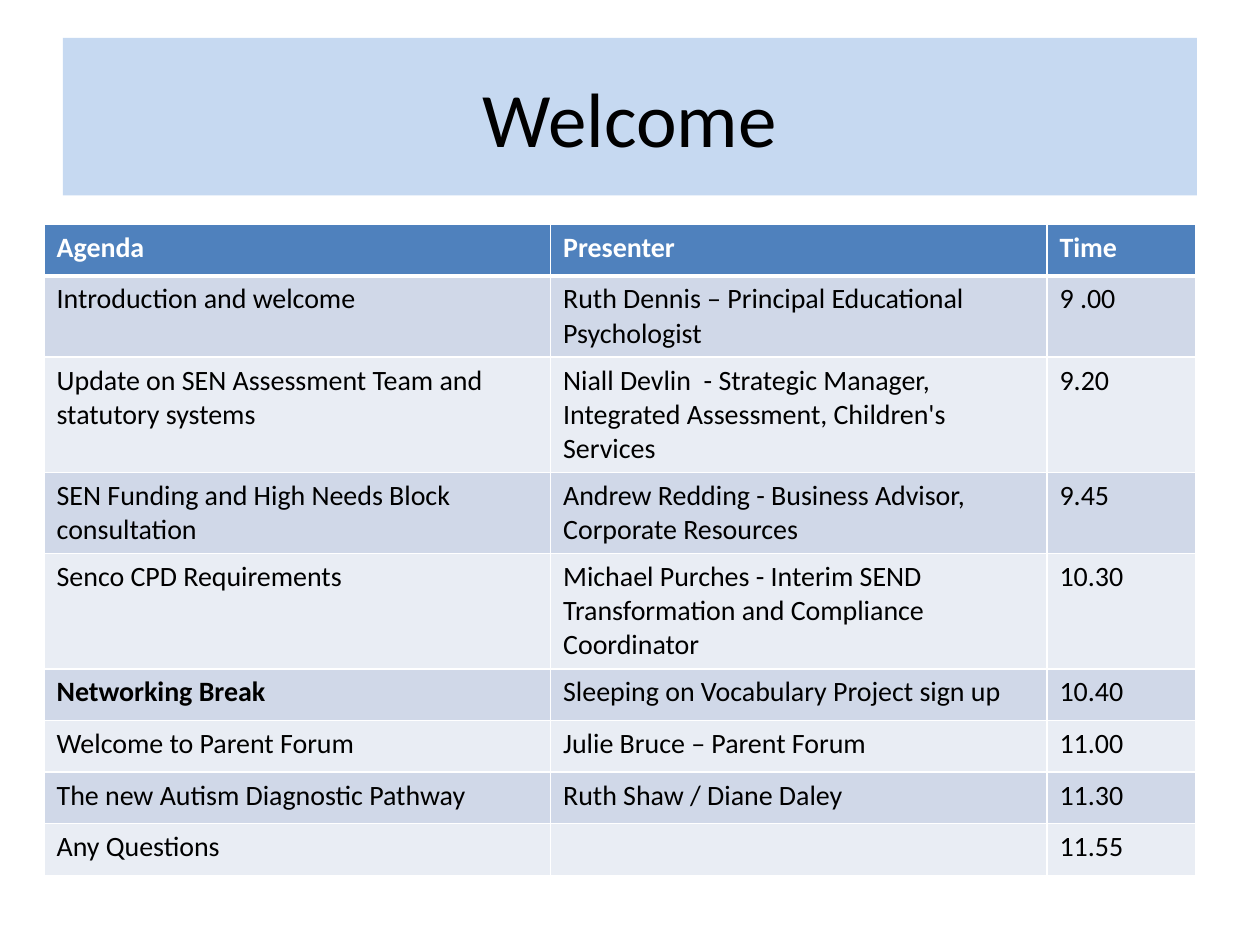
from lxml import etree
from pptx import Presentation, util as u
from pptx.dml.color import RGBColor
from pptx.enum import shapes, text
from pptx.oxml import ns

BANNER = RGBColor(0xC6, 0xD9, 0xF1)
HEADER = RGBColor(0x4F, 0x81, 0xBD)
BANDS = [RGBColor(0xD0, 0xD8, 0xE8), RGBColor(0xE9, 0xED, 0xF4)]
WHITE = RGBColor(0xFF, 0xFF, 0xFF)
BLACK = RGBColor(0x00, 0x00, 0x00)

AGENDA = [
    ("Agenda", "Presenter", "Time"),
    ("Introduction and welcome",
     "Ruth Dennis – Principal Educational Psychologist", "9 .00"),
    ("Update on SEN Assessment Team and statutory systems",
     "Niall Devlin  - Strategic Manager, Integrated Assessment, Children's Services", "9.20"),
    ("SEN Funding and High Needs Block consultation",
     "Andrew Redding - Business Advisor, Corporate Resources", "9.45"),
    ("Senco CPD Requirements",
     "Michael Purches - Interim SEND Transformation and Compliance Coordinator", "10.30"),
    ("Networking Break", "Sleeping on Vocabulary Project sign up", "10.40"),
    ("Welcome to Parent Forum", "Julie Bruce – Parent Forum", "11.00"),
    ("The new Autism Diagnostic Pathway", "Ruth Shaw / Diane Daley", "11.30"),
    ("Any Questions", "", "11.55"),
]
COLUMNS = [4.02, 3.94, 1.18]
ROW = 0.41


def write(frame, words, size=16, color=BLACK, bold=False, align=text.PP_ALIGN.LEFT):
    para = frame.paragraphs[0]
    para.alignment = align
    para.font.size = u.Pt(size)
    if words:
        span = para.add_run()
        span.text = words
        span.font.name = "Calibri"
        span.font.size = u.Pt(size)
        span.font.bold = bold
        span.font.color.rgb = color


def add_borders(cell, bottom, top):
    properties = cell._tc.get_or_add_tcPr()
    for side, width in (("L", 1), ("R", 1), ("T", top), ("B", bottom)):
        line = etree.SubElement(properties, ns.qn("a:ln" + side), w=str(u.Pt(width)))
        paint = etree.SubElement(line, ns.qn("a:solidFill"))
        etree.SubElement(paint, ns.qn("a:srgbClr"), val=str(WHITE))


deck = Presentation()
deck.slide_width, deck.slide_height = u.Inches(10), u.Inches(7.5)
page = deck.slides.add_slide(deck.slide_layouts[6])

# Title banner, one twentieth of the page in from each side
banner = page.shapes.add_shape(
    shapes.MSO_SHAPE.RECTANGLE,
    int(deck.slide_width * 0.05), int(deck.slide_height * 0.04),
    int(deck.slide_width * 0.9), u.Inches(1.25))
banner.shadow.inherit = False
banner.fill.solid()
banner.fill.fore_color.rgb = BANNER
banner.line.fill.background()
banner.text_frame.word_wrap = True
banner.text_frame.vertical_anchor = text.MSO_ANCHOR.MIDDLE
write(banner.text_frame, "Welcome", size=44, align=text.PP_ALIGN.CENTER)

# Agenda table; rows grow with their text
grid = page.shapes.add_table(
    len(AGENDA), len(COLUMNS), u.Inches(0.35), u.Inches(1.78),
    u.Inches(sum(COLUMNS)), u.Inches(ROW * len(AGENDA))).table
for column, width in zip(grid.columns, COLUMNS):
    column.width = u.Inches(width)

for r, entries in enumerate(AGENDA):
    grid.rows[r].height = u.Inches(ROW)
    heading = r == 0
    for c, words in enumerate(entries):
        cell = grid.cell(r, c)
        add_borders(cell, bottom=3 if heading else 1, top=3 if r == 1 else 1)
        cell.fill.solid()
        cell.fill.fore_color.rgb = HEADER if heading else BANDS[(r - 1) % 2]
        write(cell.text_frame, words, color=WHITE if heading else BLACK,
              bold=heading or words == "Networking Break")

deck.save("out.pptx")
